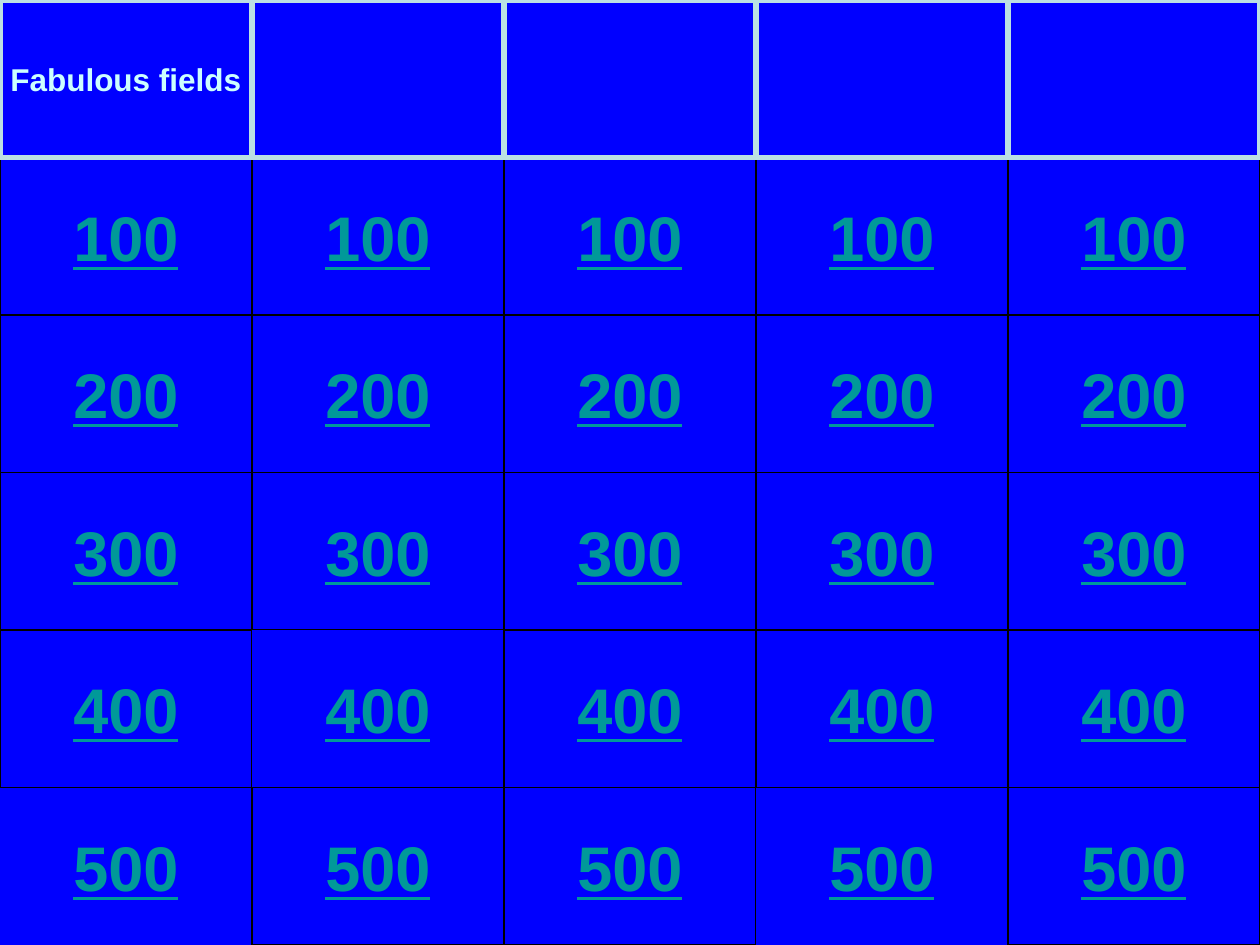
from dataclasses import dataclass

from pptx import Presentation
from pptx.dml.color import RGBColor as Rgb
from pptx.enum.shapes import MSO_SHAPE as Kind
from pptx.enum.text import MSO_ANCHOR as Anchor, PP_ALIGN as Align
from pptx.util import Emu, Pt

PX = 9525  # EMU per px, 96 px to the inch
WIDE, HIGH = 960, 720
COLS, ROWS = 5, 6
CELL_W, CELL_H = WIDE // COLS, HIGH // ROWS

TOPICS = ["Fabulous fields", "", "", "", ""]
POINTS = [100, 200, 300, 400, 500]
BARE = {(0, 500), (1, 400), (3, 500)}  # buttons without an outline


@dataclass(frozen=True)
class Theme:
    face: str = "Arial"
    board: Rgb = Rgb(0, 0, 255)
    edge: Rgb = Rgb(0, 0, 0)
    frame: Rgb = Rgb(0xBB, 0xE0, 0xE3)
    topic: Rgb = Rgb(0xCC, 0xFF, 0xFF)
    score: Rgb = Rgb(0, 0x99, 0x99)
    topic_size: float = 18
    score_size: float = 36
    edge_width: float = 0.75
    frame_width: float = 3


THEME = Theme()


def add_cell(slide, kind, col, row):
    """Add one plain cell of the board grid."""
    cell = slide.shapes.add_shape(
        kind, Emu(col * CELL_W * PX), Emu(row * CELL_H * PX),
        Emu(CELL_W * PX), Emu(CELL_H * PX))
    cell.shadow.inherit = False
    cell.fill.solid()
    cell.fill.fore_color.rgb = THEME.board
    return cell


def set_line(cell, color, width):
    cell.line.color.rgb = color
    cell.line.width = Pt(width)


def set_text(cell, text, size, color, under=False):
    frame = cell.text_frame
    frame.word_wrap = False
    frame.vertical_anchor = Anchor.MIDDLE
    para = frame.paragraphs[0]
    para.text = text
    para.alignment = Align.CENTER
    font = para.font
    font.name, font.size, font.bold = THEME.face, Pt(size), True
    font.underline = under
    font.color.rgb = color


def add_button(slide, col, row, score):
    cell = add_cell(slide, Kind.ACTION_BUTTON_CUSTOM, col, row)
    if (col, score) in BARE:
        cell.line.fill.background()
    else:
        set_line(cell, THEME.edge, THEME.edge_width)
    set_text(cell, str(score), THEME.score_size, THEME.score, under=True)


def add_topic(slide, col, text):
    cell = add_cell(slide, Kind.RECTANGLE, col, 0)
    set_line(cell, THEME.frame, THEME.frame_width)
    if text:
        set_text(cell, text, THEME.topic_size, THEME.topic)


def main():
    deck = Presentation()
    deck.slide_width, deck.slide_height = Emu(WIDE * PX), Emu(HIGH * PX)
    slide = deck.slides.add_slide(deck.slide_layouts[6])
    slide.background.fill.solid()
    slide.background.fill.fore_color.rgb = THEME.board

    # Score buttons, column by column
    for col in range(COLS):
        for row, score in enumerate(POINTS, 1):
            add_button(slide, col, row, score)

    # Topic row, in front of the buttons
    for col, text in enumerate(TOPICS):
        add_topic(slide, col, text)

    deck.save("out.pptx")


if __name__ == "__main__":
    main()
